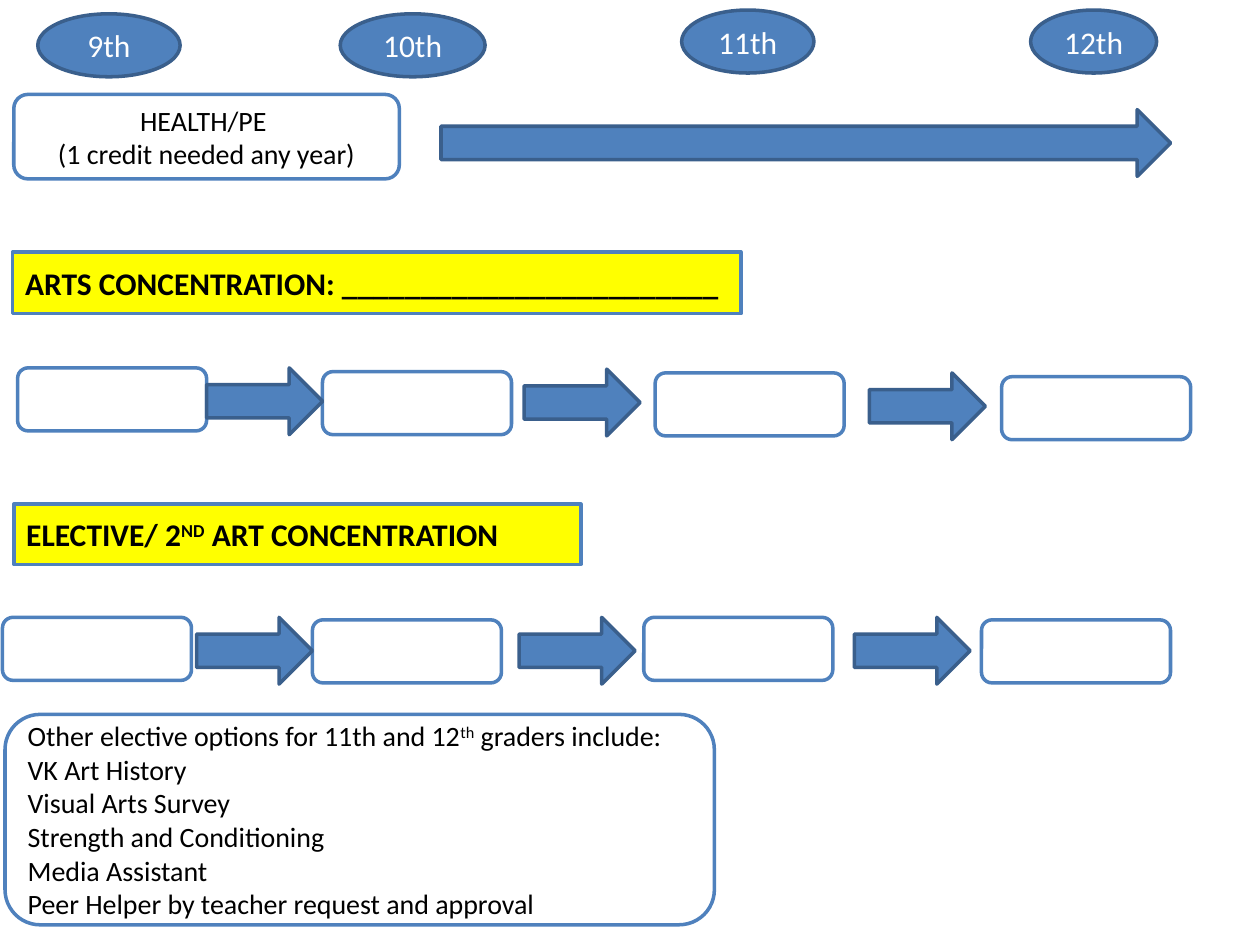
from dataclasses import dataclass

from pptx import Presentation
from pptx.dml.color import RGBColor
from pptx.enum.shapes import MSO_SHAPE
from pptx.enum.text import MSO_ANCHOR, PP_ALIGN
from pptx.util import Emu, Pt

PX = 9144  # 100 px to the inch
RECTANGLE = MSO_SHAPE.RECTANGLE
ROUNDED = MSO_SHAPE.ROUNDED_RECTANGLE
ARROW = MSO_SHAPE.RIGHT_ARROW
OVAL = MSO_SHAPE.FLOWCHART_CONNECTOR
LEFT, CENTER = PP_ALIGN.LEFT, PP_ALIGN.CENTER
MIDDLE = MSO_ANCHOR.MIDDLE

COLORS = {
    "blue": "4F81BD",
    "navy": "3A5F8C",
    "yellow": "FFFF00",
    "white": "FFFFFF",
    "black": "000000",
}


@dataclass(frozen=True)
class Style:
    geometry: int
    fill: str
    line: str
    color: str = "black"
    size: int = 18
    bold: bool = False
    align: int = LEFT


@dataclass(frozen=True)
class Box:
    left: int
    top: int
    width: int
    height: int
    lines: tuple[str, ...] = ()  # text between ^ marks is superscript


HEADING = Style(RECTANGLE, "yellow", "blue", bold=True)
COURSE = Style(ROUNDED, "white", "blue")
REQUIREMENT = Style(ROUNDED, "white", "blue", size=16, align=CENTER)
OPTIONS = Style(ROUNDED, "white", "blue", size=16)
STEP = Style(ARROW, "blue", "navy")
GRADE = Style(OVAL, "blue", "navy", color="white", align=CENTER)

COURSE_SIZE = (150, 50)
STEP_SIZE = (92, 53)
COURSES = [(14, 292), (256, 295), (520, 296), (795, 299),
           (2, 490), (248, 492), (511, 490), (779, 492)]
STEPS = [(164, 292), (416, 293), (690, 296),
         (156, 490), (412, 490), (678, 490)]

PARTS = [
    # Concentration headings
    (HEADING, [
        Box(10, 200, 578, 49, ("ARTS CONCENTRATION: ________________________",)),
        Box(11, 400, 450, 48, ("ELECTIVE/ 2^ND^ ART CONCENTRATION",)),
    ]),
    # Empty course boxes and the arrows between them
    (COURSE, [Box(*corner, *COURSE_SIZE) for corner in COURSES]),
    (STEP, [Box(*corner, *STEP_SIZE) for corner in STEPS]),
    # Health requirement and the arrow across the years
    (REQUIREMENT, [Box(11, 75, 306, 67, ("HEALTH/PE ", "(1 credit needed any year)"))]),
    (STEP, [Box(350, 87, 579, 53)]),
    # Grade levels
    (GRADE, [
        Box(30, 11, 113, 50, ("9th",)),
        Box(270, 11, 115, 50, ("10th",)),
        Box(541, 8, 105, 50, ("11th",)),
        Box(818, 8, 100, 50, ("12th",)),
    ]),
    # Other electives
    (OPTIONS, [Box(4, 567, 563, 167, (
        "Other elective options for 11th and 12^th^ graders include:",
        "VK Art History",
        "Visual Arts Survey",
        "Strength and Conditioning",
        "Media Assistant",
        "Peer Helper by teacher request and approval",
    ))]),
]


def rgb(name: str) -> RGBColor:
    return RGBColor.from_string(COLORS[name])


def write_line(paragraph, text: str, style: Style) -> None:
    paragraph.alignment = style.align
    font_format = {"name": "Calibri", "size": Pt(style.size), "bold": style.bold}
    for index, part in enumerate(text.split("^")):
        run = paragraph.add_run()
        run.text = part
        for attribute, value in font_format.items():
            setattr(run.font, attribute, value)
        run.font.color.rgb = rgb(style.color)
        if index % 2:
            run._r.get_or_add_rPr().set("baseline", "30000")


def draw_box(slide, box: Box, style: Style) -> None:
    lengths = (box.left, box.top, box.width, box.height)
    shape = slide.shapes.add_shape(style.geometry, *(Emu(n * PX) for n in lengths))
    shape.shadow.inherit = False
    shape.fill.solid()
    shape.fill.fore_color.rgb = rgb(style.fill)
    shape.line.color.rgb = rgb(style.line)
    shape.line.width = Pt(2)
    frame = shape.text_frame
    for attribute, value in {"word_wrap": True, "vertical_anchor": MIDDLE}.items():
        setattr(frame, attribute, value)
    for index, text in enumerate(box.lines):
        paragraph = frame.add_paragraph() if index else frame.paragraphs[0]
        write_line(paragraph, text, style)


def main() -> None:
    presentation = Presentation()
    presentation.slide_width = Emu(1000 * PX)
    presentation.slide_height = Emu(750 * PX)
    slide = presentation.slides.add_slide(presentation.slide_layouts[6])
    for style, boxes in PARTS:
        for box in boxes:
            draw_box(slide, box, style)
    presentation.save("out.pptx")


if __name__ == "__main__":
    main()
